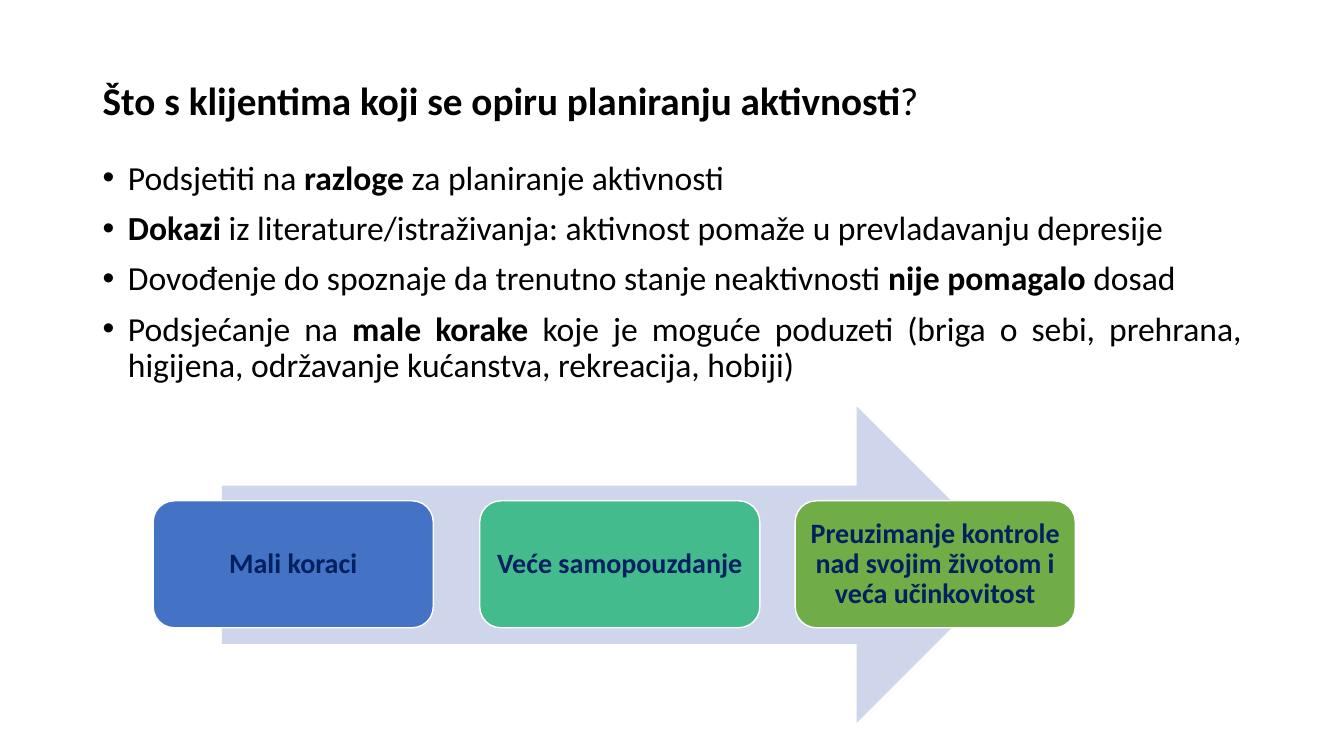
from lxml.etree import SubElement
from pptx import Presentation
from pptx.dml.color import RGBColor
from pptx.enum.shapes import MSO_SHAPE
from pptx.enum.text import MSO_ANCHOR, PP_ALIGN
from pptx.oxml.ns import qn
from pptx.util import Cm, Pt


def color(hex_code):
    return RGBColor.from_string(hex_code)


def write_runs(paragraph, parts, size, hex_code="000000"):
    """Fill a paragraph with (text, bold) parts."""
    paragraph.line_spacing = 0.9
    for text, bold in parts:
        run = paragraph.add_run()
        run.text = text
        run.font.name = "Calibri"
        run.font.size = Pt(size)
        run.font.bold = bold
        run.font.color.rgb = color(hex_code)


presentation = Presentation()
presentation.slide_width = Cm(33.87)
presentation.slide_height = Cm(19.05)
slide = presentation.slides.add_slide(presentation.slide_layouts[6])

# Title
title = slide.shapes.add_textbox(Cm(2.34), Cm(1.63), Cm(29.21), Cm(1.9))
title.text_frame.word_wrap = True
title.text_frame.vertical_anchor = MSO_ANCHOR.MIDDLE
title_parts = [("Što s klijentima koji se opiru planiranju aktivnosti", True), ("?", False)]
write_runs(title.text_frame.paragraphs[0], title_parts, 28)

# Bulleted advice
advice = [
    [("Podsjetiti na ", False), ("razloge", True), (" za planiranje aktivnosti", False)],
    [("Dokazi", True),
     (" iz literature/istraživanja: aktivnost pomaže u prevladavanju depresije", False)],
    [("Dovođenje do spoznaje da trenutno stanje neaktivnosti ", False),
     ("nije pomagalo ", True), ("dosad", False)],
    [("Podsjećanje na ", False), ("male korake ", True),
     ("koje je moguće poduzeti (briga o sebi, prehrana, higijena, "
      "održavanje kućanstva, rekreacija, hobiji)", False)],
]
body = slide.shapes.add_textbox(Cm(2.34), Cm(3.94), Cm(29.21), Cm(14.1))
body.text_frame.word_wrap = True
for index, parts in enumerate(advice):
    paragraph = body.text_frame.add_paragraph() if index else body.text_frame.paragraphs[0]
    write_runs(paragraph, parts, 24)
    paragraph.alignment = PP_ALIGN.JUSTIFY
    paragraph.space_before = Pt(10)
    properties = paragraph._p.get_or_add_pPr()
    properties.set("marL", str(Cm(0.635)))
    properties.set("indent", str(-Cm(0.635)))
    SubElement(properties, qn("a:buFont")).set("typeface", "Arial")
    SubElement(properties, qn("a:buChar")).set("char", "•")

# Arrow behind the three steps
arrow = slide.shapes.add_shape(MSO_SHAPE.RIGHT_ARROW, Cm(5.59), Cm(10.24), Cm(19.99), Cm(7.98))
arrow.shadow.inherit = False
arrow.fill.solid()
arrow.fill.fore_color.rgb = color("CFD5EA")
arrow.line.fill.background()

steps = [
    ("Mali koraci", 3.86, "4472C4"),
    ("Veće samopouzdanje", 12.09, "43BB8D"),
    ("Preuzimanje kontrole nad svojim životom i veća učinkovitost", 20.04, "70AD47"),
]
for text, left, fill in steps:
    step = slide.shapes.add_shape(
        MSO_SHAPE.ROUNDED_RECTANGLE, Cm(left), Cm(12.62), Cm(7.06), Cm(3.2))
    step.shadow.inherit = False
    step.fill.solid()
    step.fill.fore_color.rgb = color(fill)
    step.line.color.rgb = color("FFFFFF")
    step.line.width = Pt(1)
    frame = step.text_frame
    frame.word_wrap = True
    frame.vertical_anchor = MSO_ANCHOR.MIDDLE
    frame.margin_left = frame.margin_right = Cm(0.2)
    frame.margin_top = frame.margin_bottom = Cm(0.2)
    paragraph = frame.paragraphs[0]
    write_runs(paragraph, [(text, True)], 20, "002060")
    paragraph.alignment = PP_ALIGN.CENTER

presentation.save("out.pptx")
